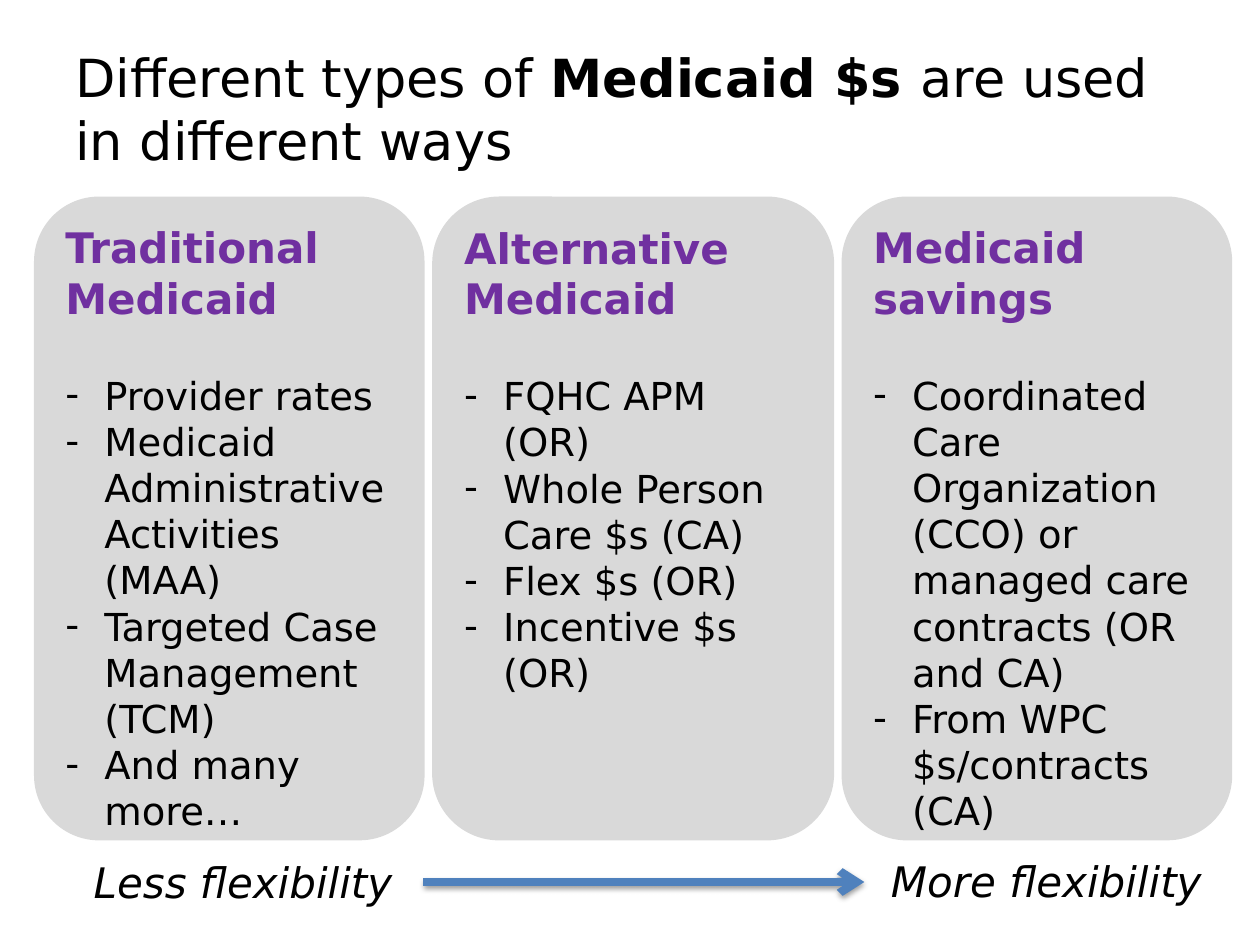
from dataclasses import dataclass

from lxml import etree
from pptx import Presentation
from pptx.dml.color import RGBColor
from pptx.enum.shapes import MSO_CONNECTOR as Connector, MSO_SHAPE as Shape
from pptx.enum.text import MSO_ANCHOR as Anchor, PP_ALIGN as Align
from pptx.oxml.ns import qn
from pptx.util import Inches, Pt

FONT = "DejaVu Sans"
BLACK, PURPLE, GREY, BLUE = "000000", "7030A0", "D9D9D9", "4F81BD"
CARD_TOP, CARD_HEIGHT = 1.56, 5.11
INDENT = 0.31
ARROW_Y = 7


@dataclass
class Card:
    left: float
    width: float
    heading: str
    items: list[str]


@dataclass
class Label:
    left: float
    top: float
    width: float
    text: str


CARDS = [
    Card(0.27, 3.1, "Traditional Medicaid", [
        "Provider rates",
        "Medicaid Administrative Activities (MAA)",
        "Targeted Case Management (TCM)",
        "And many more…",
    ]),
    Card(3.43, 3.19, "Alternative Medicaid", [
        "FQHC APM (OR)",
        "Whole Person Care $s (CA)",
        "Flex $s (OR)",
        "Incentive $s (OR)",
    ]),
    Card(6.68, 3.1, "Medicaid savings", [
        "Coordinated Care Organization (CCO) or managed care contracts (OR and CA)",
        "From WPC $s/contracts (CA)",
    ]),
]
LABELS = [
    Label(0.5, 6.68, 2.86, "Less flexibility"),
    Label(6.86, 6.67, 2.89, "More flexibility"),
]


def color(code: str) -> RGBColor:
    return RGBColor.from_string(code)


def add_span(para, text: str, size: float, code: str = BLACK,
             bold: bool = False, italic: bool = False) -> None:
    span = para.add_run()
    span.text = text
    span.font.name = FONT
    span.font.size = Pt(size)
    span.font.bold = bold
    span.font.italic = italic
    span.font.color.rgb = color(code)


def add_dash(para) -> None:
    """Give a paragraph a hanging dash bullet."""
    props = para._p.get_or_add_pPr()
    props.set("marL", str(Inches(INDENT)))
    props.set("indent", str(-Inches(INDENT)))
    etree.SubElement(props, qn("a:buFont"), typeface=FONT)
    etree.SubElement(props, qn("a:buChar"), char="-")


def add_card(page, card: Card) -> None:
    box = page.shapes.add_shape(
        Shape.ROUNDED_RECTANGLE, Inches(card.left), Inches(CARD_TOP),
        Inches(card.width), Inches(CARD_HEIGHT))
    box.shadow.inherit = False
    box.fill.solid()
    box.fill.fore_color.rgb = color(GREY)
    box.line.fill.background()
    frame = box.text_frame
    frame.word_wrap = True
    frame.vertical_anchor = Anchor.TOP

    para = frame.paragraphs[0]
    para.alignment = Align.LEFT
    para.space_after = Pt(28)
    add_span(para, card.heading, 24, PURPLE, bold=True)
    for item in card.items:
        para = frame.add_paragraph()
        para.alignment = Align.LEFT
        add_dash(para)
        add_span(para, item, 22)


def add_text_box(page, left: float, top: float, width: float, height: float):
    """Add a vertically centred text box and return its first paragraph."""
    box = page.shapes.add_textbox(
        Inches(left), Inches(top), Inches(width), Inches(height))
    box.text_frame.word_wrap = True
    box.text_frame.vertical_anchor = Anchor.MIDDLE
    return box.text_frame.paragraphs[0]


def add_label(page, label: Label) -> None:
    para = add_text_box(page, label.left, label.top, label.width, 0.64)
    para.alignment = Align.CENTER
    add_span(para, label.text, 24, italic=True)


def add_arrow(page, start: float, end: float, y: float) -> None:
    arrow = page.shapes.add_connector(
        Connector.STRAIGHT, Inches(start), Inches(y), Inches(end), Inches(y))
    arrow.line.color.rgb = color(BLUE)
    arrow.line.width = Pt(4.5)
    etree.SubElement(arrow.line._get_or_add_ln(), qn("a:tailEnd"), type="arrow")
    # Soft shadow straight below
    effects = etree.SubElement(arrow._element.spPr, qn("a:effectLst"))
    shadow = etree.SubElement(
        effects, qn("a:outerShdw"), blurRad=str(Pt(3.1)), dist=str(Pt(1.6)),
        dir=str(90 * 60000), rotWithShape="0")
    tint = etree.SubElement(shadow, qn("a:srgbClr"), val=BLACK)
    etree.SubElement(tint, qn("a:alpha"), val="38000")


def main() -> None:
    deck = Presentation()
    deck.slide_width, deck.slide_height = Inches(10), Inches(7.5)
    page = deck.slides.add_slide(deck.slide_layouts[6])

    # Title
    title = add_text_box(page, 0.5, 0.23, 9, 1.25)
    add_span(title, "Different types of ", 30)
    add_span(title, "Medicaid $s ", 30, bold=True)
    add_span(title, "are used in different ways", 30)

    # Funding types
    for card in CARDS:
        add_card(page, card)

    # Flexibility scale
    for label in LABELS:
        add_label(page, label)
    less, more = LABELS
    add_arrow(page, less.left + less.width, more.left, ARROW_Y)

    deck.save("out.pptx")


if __name__ == "__main__":
    main()
